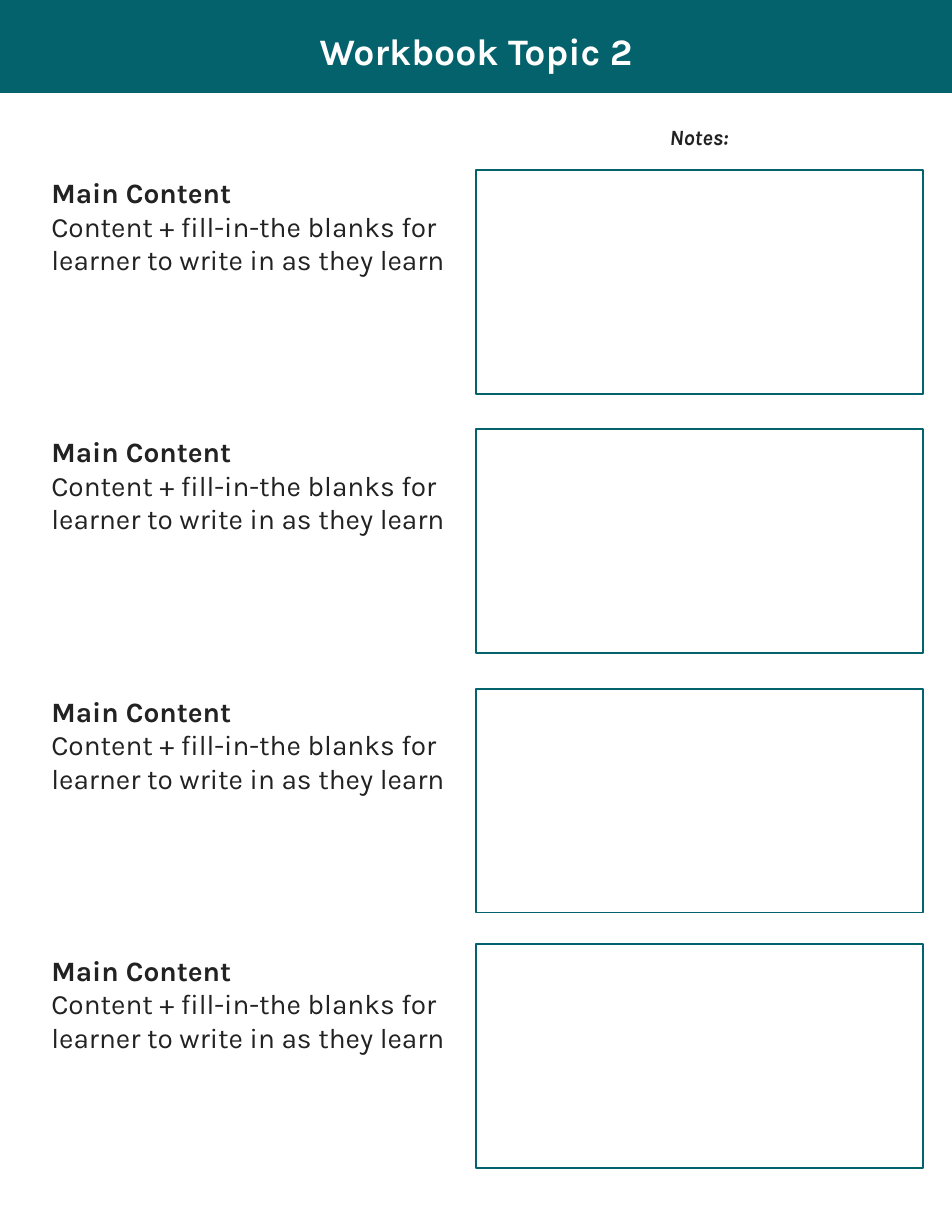
from dataclasses import dataclass

from pptx import Presentation
from pptx.dml.color import RGBColor
from pptx.enum.shapes import MSO_SHAPE
from pptx.enum.text import MSO_AUTO_SIZE, PP_ALIGN
from pptx.util import Inches, Pt


@dataclass(frozen=True)
class Theme:
    font: str = "Karla"
    teal: RGBColor = RGBColor(0x03, 0x62, 0x6B)
    white: RGBColor = RGBColor(0xFF, 0xFF, 0xFF)
    ink: RGBColor = RGBColor(0x22, 0x22, 0x22)
    title: int = 24
    body: int = 18
    label: int = 14
    line: int = 1


class Page:
    def __init__(self, slide, theme):
        self.slide = slide
        self.theme = theme

    def box(self, left, top, width, height, fill):
        shape = self.slide.shapes.add_shape(
            MSO_SHAPE.RECTANGLE, Inches(left), Inches(top), Inches(width), Inches(height))
        shape.shadow.inherit = False
        shape.fill.solid()
        shape.fill.fore_color.rgb = fill
        shape.line.color.rgb = self.theme.teal
        shape.line.width = Pt(self.theme.line)

    def text(self, left, top, width, height, lines, size, color,
             align=PP_ALIGN.LEFT, wrap=True):
        """Add one paragraph for each (words, bold, italic) line."""
        frame = self.slide.shapes.add_textbox(
            Inches(left), Inches(top), Inches(width), Inches(height)).text_frame
        frame.word_wrap = wrap
        frame.auto_size = MSO_AUTO_SIZE.SHAPE_TO_FIT_TEXT
        for i, (words, bold, italic) in enumerate(lines):
            para = frame.add_paragraph() if i else frame.paragraphs[0]
            para.alignment = align
            run = para.add_run()
            run.text = words
            font = run.font
            font.name = self.theme.font
            font.size = Pt(size)
            font.bold = bold
            font.italic = italic
            font.color.rgb = color


TOPIC = [
    ("Main Content", True, False),
    ("Content + fill-in-the blanks for learner to write in as they learn", False, False),
]
# Top of the text and top of its notes box, row by row
ROWS = [(1.52, 1.52), (3.83, 3.83), (6.15, 6.15), (8.46, 8.43)]


def main():
    deck = Presentation()
    deck.slide_width, deck.slide_height = Inches(8.5), Inches(11)
    theme = Theme()
    page = Page(deck.slides.add_slide(deck.slide_layouts[6]), theme)

    page.box(0, 0, 8.5, 0.82, theme.teal)
    page.text(1.01, 0.2, 6.48, 0.5, [("Workbook Topic 2", True, False)],
              theme.title, theme.white, align=PP_ALIGN.CENTER)
    page.text(5.88, 1.06, 0.74, 0.34, [("Notes:", True, True)],
              theme.label, theme.ink, wrap=False)
    for top, notes in ROWS:
        page.box(4.25, notes, 3.99, 2, theme.white)
        page.text(0.36, top, 3.72, 1.01, TOPIC, theme.body, theme.ink)

    deck.save("out.pptx")


if __name__ == "__main__":
    main()
